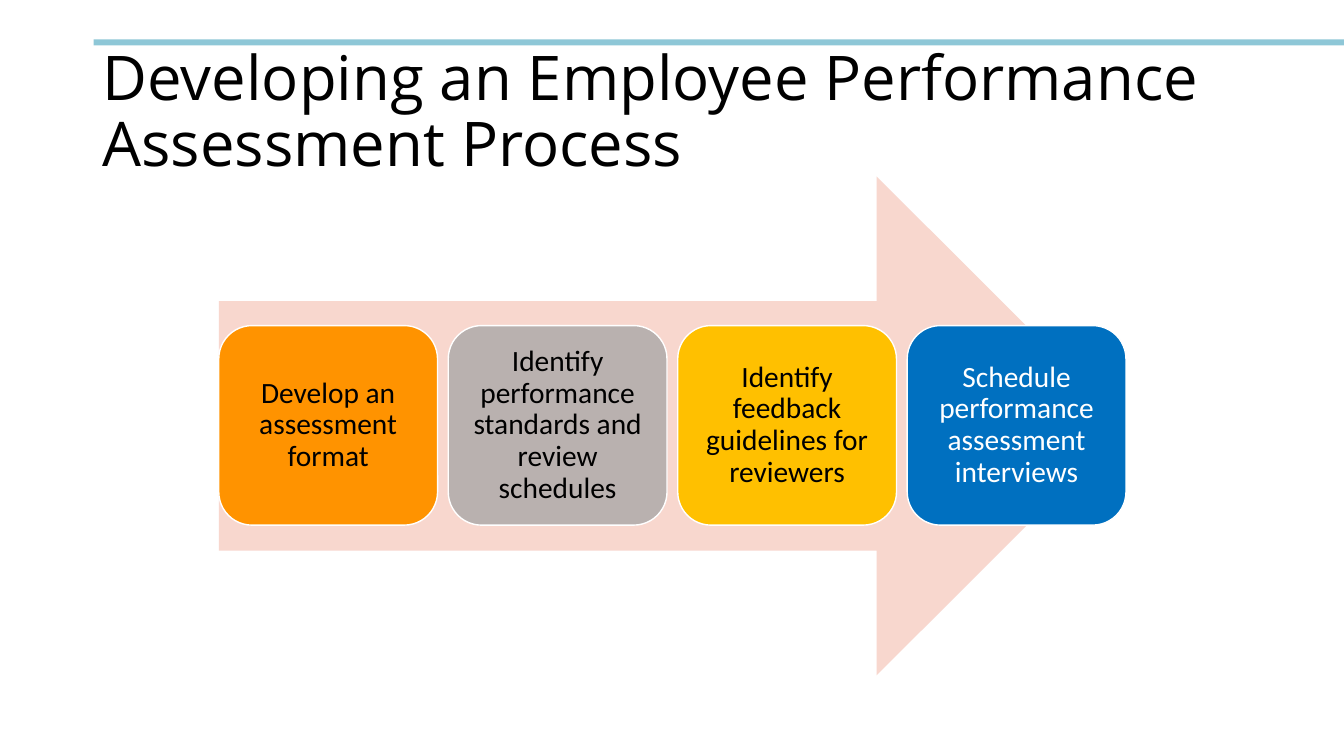
"""Build a slide showing four steps of an employee assessment process along an arrow."""
from lxml.etree import SubElement
from pptx import Presentation
from pptx.dml.color import RGBColor
from pptx.enum.shapes import MSO_SHAPE
from pptx.enum.text import MSO_ANCHOR, PP_ALIGN
from pptx.oxml.ns import qn
from pptx.util import Inches, Pt

COLORS = {
    "rule": "8EC7D7", "arrow": "F8D7CE", "orange": "FF9300", "gray": "A5A5A5",
    "gold": "FFC000", "blue": "0070C0", "black": "000000", "white": "FFFFFF",
}
STEPS = [
    ("Develop an assessment format", "orange", "black"),
    ("Identify performance standards and review schedules", "gray", "black"),
    ("Identify feedback guidelines for reviewers", "gold", "black"),
    ("Schedule performance assessment interviews", "blue", "white"),
]

deck = Presentation()
deck.slide_width, deck.slide_height = Inches(13.33), Inches(7.5)
slide = deck.slides.add_slide(deck.slide_layouts[6])


def add_block(kind, left, top, width, height, color):
    block = slide.shapes.add_shape(
        kind, Inches(left), Inches(top), Inches(width), Inches(height))
    block.shadow.inherit = False
    block.fill.solid()
    block.fill.fore_color.rgb = RGBColor.from_string(COLORS[color])
    block.line.fill.background()
    return block


def add_words(frame, words, font, size, color):
    frame.word_wrap = True
    frame.vertical_anchor = MSO_ANCHOR.MIDDLE
    para = frame.paragraphs[0]
    para.line_spacing = 0.9
    run = para.add_run()
    run.text = words
    run.font.name = font
    run.font.size = Pt(size)
    run.font.color.rgb = RGBColor.from_string(COLORS[color])
    return para


add_block(MSO_SHAPE.RECTANGLE, 0.93, 0.39, 12.4, 0.06, "rule")

title = slide.shapes.add_textbox(Inches(0.92), Inches(0.4), Inches(11.5), Inches(1.45))
add_words(title.text_frame, "Developing an Employee Performance Assessment Process",
          "Open Sans", 44, "black")

add_block(MSO_SHAPE.RIGHT_ARROW, 2.17, 1.75, 9, 4.95, "arrow")

for index, (words, color, ink) in enumerate(STEPS):
    card = add_block(MSO_SHAPE.ROUNDED_RECTANGLE,
                     2.17 + index * 2.276, 3.23, 2.17, 1.98, color)
    card.line.color.rgb = RGBColor.from_string(COLORS["white"])
    card.line.width = Pt(1)
    if color == "gray":
        tint = card.fill._xPr.find(qn("a:solidFill"))[0]
        SubElement(tint, qn("a:alpha"), val="75000")
    frame = card.text_frame
    frame.margin_left = frame.margin_right = Inches(0.09)
    frame.margin_top = frame.margin_bottom = Inches(0.09)
    para = add_words(frame, words, "Calibri", 21, ink)
    para.alignment = PP_ALIGN.CENTER

deck.save("out.pptx")
